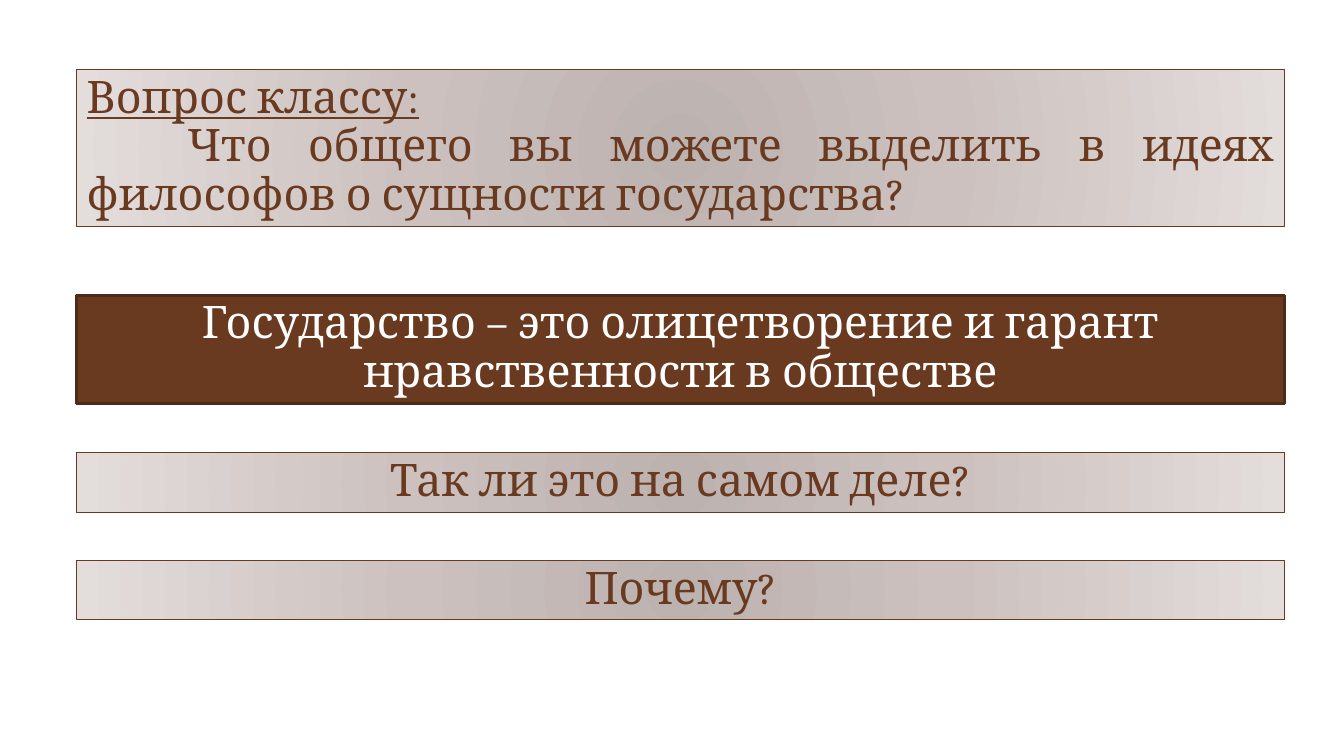
from dataclasses import dataclass
from pptx import Presentation
from pptx.dml.color import RGBColor
from pptx.enum.shapes import MSO_SHAPE
from pptx.enum.text import MSO_ANCHOR, MSO_AUTO_SIZE, PP_ALIGN
from pptx.oxml import parse_xml
from pptx.oxml.ns import nsdecls, qn
from pptx.util import Emu, Pt

EMU_PER_PX = 9144


@dataclass(frozen=True)
class Theme:
    font: str = "Cambria"
    size: int = 32
    line_spacing: float = 0.9
    brown: str = "6A3A20"
    dark_brown: str = "4E2B18"
    white: str = "FFFFFF"
    thin: float = 0.75
    thick: float = 2.25
    glow: tuple = ((0, "BCB2AF"), (45, "CCC1BE"), (100, "E3DDDC"))


THEME = Theme()


def px(length):
    return Emu(length * EMU_PER_PX)


def fill_radial(shape, stops):
    shape.fill.background()
    stop_xml = "".join(
        f'<a:gs pos="{position * 1000}"><a:srgbClr val="{color}"/></a:gs>'
        for position, color in stops
    )
    gradient = parse_xml(
        f'<a:gradFill {nsdecls("a")} rotWithShape="1"><a:gsLst>{stop_xml}</a:gsLst>'
        '<a:path path="circle"><a:fillToRect l="100000" t="100000" r="100000" b="100000"/>'
        "</a:path></a:gradFill>"
    )
    properties = shape._element.spPr
    properties.replace(properties.find(qn("a:noFill")), gradient)


def add_panel(page, box, fill=None, line=THEME.brown, weight=THEME.thin):
    panel = page.shapes.add_shape(MSO_SHAPE.RECTANGLE, *map(px, box))
    panel.shadow.inherit = False
    if fill:
        panel.fill.solid()
        panel.fill.fore_color.rgb = RGBColor.from_string(fill)
    else:
        fill_radial(panel, THEME.glow)
    panel.line.color.rgb = RGBColor.from_string(line)
    panel.line.width = Pt(weight)
    frame = panel.text_frame
    frame.word_wrap = True
    frame.auto_size = MSO_AUTO_SIZE.SHAPE_TO_FIT_TEXT
    frame.vertical_anchor = MSO_ANCHOR.TOP
    return frame


def write(para, text, color=THEME.brown, align=PP_ALIGN.CENTER, underline=False, indent=0):
    para.alignment = align
    para.line_spacing = THEME.line_spacing
    if indent:
        properties = para._p.get_or_add_pPr()
        properties.set("marL", "0")
        properties.set("indent", str(px(indent)))
    span = para.add_run()
    span.text = text
    span.font.name = THEME.font
    span.font.size = Pt(THEME.size)
    span.font.color.rgb = RGBColor.from_string(color)
    span.font.underline = underline


def add_class_question(page, box, heading, question):
    frame = add_panel(page, box)
    write(frame.paragraphs[0], heading, align=PP_ALIGN.JUSTIFY, underline=True)
    write(frame.add_paragraph(), question, align=PP_ALIGN.JUSTIFY, indent=100)


def add_thesis(page, box, text):
    frame = add_panel(page, box, THEME.brown, THEME.dark_brown, THEME.thick)
    write(frame.paragraphs[0], text, color=THEME.white)


def add_follow_ups(page, box, questions, pitch):
    left, top, width, height = box
    for index, question in enumerate(questions):
        frame = add_panel(page, (left, top + index * pitch, width, height))
        write(frame.paragraphs[0], question)


def main():
    deck = Presentation()
    deck.slide_width, deck.slide_height = px(1333), px(750)
    page = deck.slides.add_slide(deck.slide_layouts[6])
    left, width = 76, 1198
    add_class_question(
        page,
        (left, 69, width, 156),
        "Вопрос классу:",
        "Что общего вы можете выделить в идеях философов о сущности государства?",
    )
    add_thesis(
        page,
        (left, 293, width, 107),
        "Государство – это олицетворение и гарант нравственности в обществе",
    )
    add_follow_ups(
        page,
        (left, 449, width, 59),
        ("Так ли это на самом деле?", "Почему?"),
        pitch=107,
    )
    deck.save("out.pptx")


if __name__ == "__main__":
    main()
